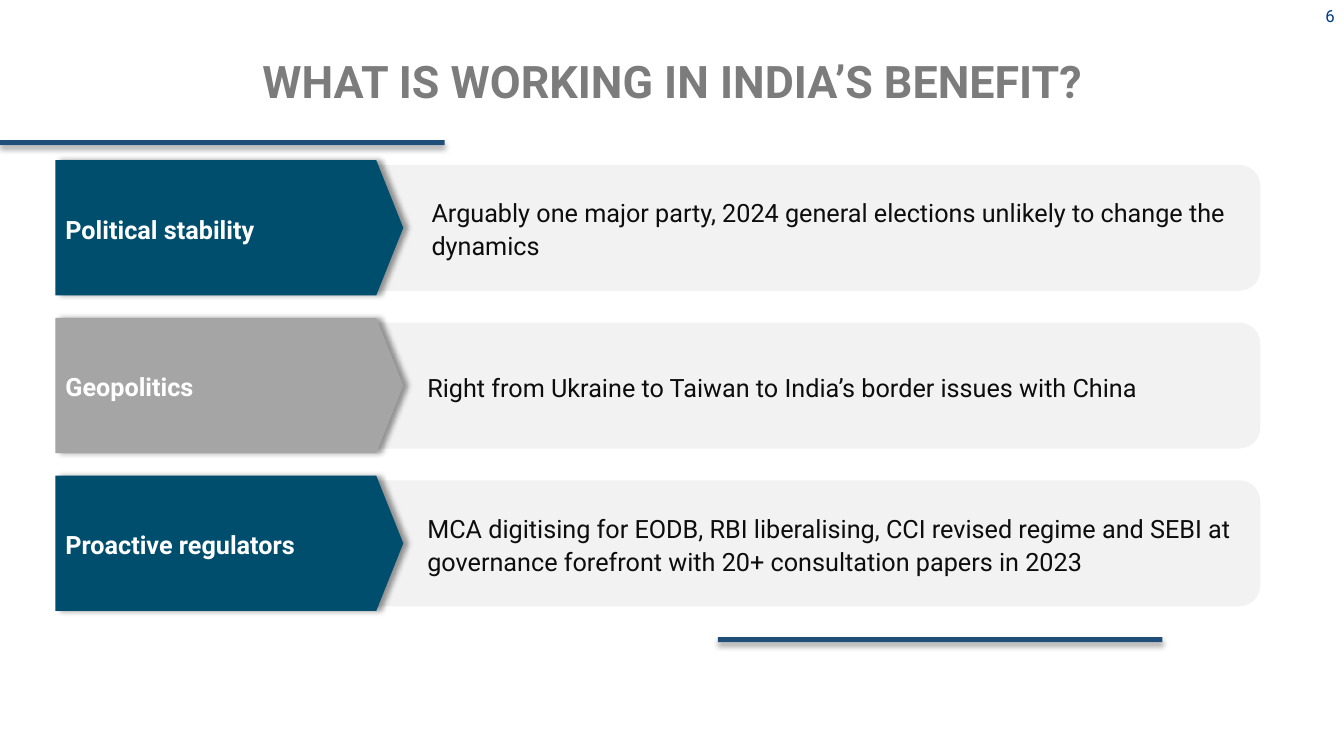
from lxml.etree import SubElement
from pptx import Presentation
from pptx.dml.color import RGBColor
from pptx.enum.shapes import MSO_SHAPE as Shape
from pptx.enum.text import MSO_ANCHOR as Anchor, PP_ALIGN as Align
from pptx.oxml.ns import qn
from pptx.util import Inches, Pt

# Content
TITLE = "WHAT IS WORKING IN INDIA’S BENEFIT?"
PAGE_NUMBER = "6"
FACTORS = [  # label, arrow colour, detail, extra left inset of the detail
    ("Political stability", "teal",
     "Arguably one major party, 2024 general elections unlikely to change the dynamics", 0.04),
    ("Geopolitics", "silver",
     "Right from Ukraine to Taiwan to India’s border issues with China", 0),
    ("Proactive regulators", "teal",
     "MCA digitising for EODB, RBI liberalising, CCI revised regime and SEBI "
     "at governance forefront with 20+ consultation papers in 2023", 0),
]
COLORS = {"teal": "004E6E", "silver": "A5A5A5", "panel": "F2F2F2", "rule": "1F4E79",
          "title": "7C7C7C", "number": "003B82", "ink": "0D0D0D", "white": "FFFFFF"}
FONT = "Roboto"

# Grid, in inches
ROW_TOP, ROW_STEP, ROW_HEIGHT = 1.59, 1.565, 1.34
ARROW_LEFT, ARROW_WIDTH = 0.55, 3.45
PANEL_LEFT, PANEL_WIDTH, PANEL_HEIGHT = 3.28, 9.22, 1.25
DETAIL_LEFT, DETAIL_WIDTH, DETAIL_HEIGHT = 4.14, 8.17, 0.89
RULE_WIDTH, RULE_HEIGHT = 4.41, 0.05
RULES = [(0, 1.39), (7.12, 6.32)]


def color(name):
    return RGBColor.from_string(COLORS[name])


def write(box, text, size, ink, bold=False, align=Align.LEFT, spacing=1.09,
          insets=(0.1, 0.1, 0.1, 0.1), wrap=True):
    frame = box.text_frame
    frame.word_wrap = wrap
    frame.vertical_anchor = Anchor.MIDDLE
    (frame.margin_left, frame.margin_top,
     frame.margin_right, frame.margin_bottom) = map(Inches, insets)
    para = frame.paragraphs[0]
    para.text = text
    para.alignment = align
    para.line_spacing = spacing
    para.font.name, para.font.size, para.font.bold = FONT, Pt(size), bold
    para.font.color.rgb = color(ink)


def add_block(page, kind, left, top, width, height, fill, shadow_angle=None):
    block = page.shapes.add_shape(kind, *map(Inches, (left, top, width, height)))
    block.shadow.inherit = False
    block.fill.solid()
    block.fill.fore_color.rgb = color(fill)
    block.line.fill.background()
    if shadow_angle is not None:
        effects = block._element.spPr.find(qn("a:effectLst"))
        shadow = SubElement(effects, qn("a:outerShdw"), blurRad=str(Pt(4)), dist=str(Pt(3)),
                            dir=str(shadow_angle * 60000), algn="tl", rotWithShape="0")
        tint = SubElement(shadow, qn("a:srgbClr"), val="000000")
        SubElement(tint, qn("a:alpha"), val="40000")
    return block


def add_text(page, left, top, width, height, *args, **options):
    box = page.shapes.add_textbox(*map(Inches, (left, top, width, height)))
    write(box, *args, **options)


def add_factor(page, row, label, fill, detail, extra_inset):
    top = ROW_TOP + row * ROW_STEP
    middle = top + ROW_HEIGHT / 2
    add_block(page, Shape.ROUNDED_RECTANGLE, PANEL_LEFT, middle - PANEL_HEIGHT / 2,
              PANEL_WIDTH, PANEL_HEIGHT, "panel")
    arrow = add_block(page, Shape.PENTAGON, ARROW_LEFT, top, ARROW_WIDTH, ROW_HEIGHT, fill, 0)
    arrow.adjustments[0] = 0.2
    write(arrow, label, 18, "white", bold=True)
    add_text(page, DETAIL_LEFT, middle - DETAIL_HEIGHT / 2, DETAIL_WIDTH, DETAIL_HEIGHT,
             detail, 18, "ink", insets=(0.1 + extra_inset, 0.1, 0.1, 0.1))


def main():
    deck = Presentation()
    deck.slide_width, deck.slide_height = Inches(13.33), Inches(7.5)
    page = deck.slides.add_slide(deck.slide_layouts[5])

    # Page number and title
    add_text(page, 13.01, 0.06, 0.23, 0.2, PAGE_NUMBER, 12, "number", align=Align.RIGHT,
             spacing=1, insets=(0, 0, 0, 0), wrap=False)
    title = page.shapes.title
    title.left, title.top, title.width, title.height = map(Inches, (0.17, 0.33, 13, 0.9))
    write(title, TITLE, 32, "title", bold=True, align=Align.CENTER, insets=(0, 0.05, 0, 0.05))

    # Factor rows
    for row, factor in enumerate(FACTORS):
        add_factor(page, row, *factor)

    # Accent rules
    for left, top in RULES:
        add_block(page, Shape.RECTANGLE, left, top, RULE_WIDTH, RULE_HEIGHT, "rule", 90)

    deck.save("out.pptx")


if __name__ == "__main__":
    main()
